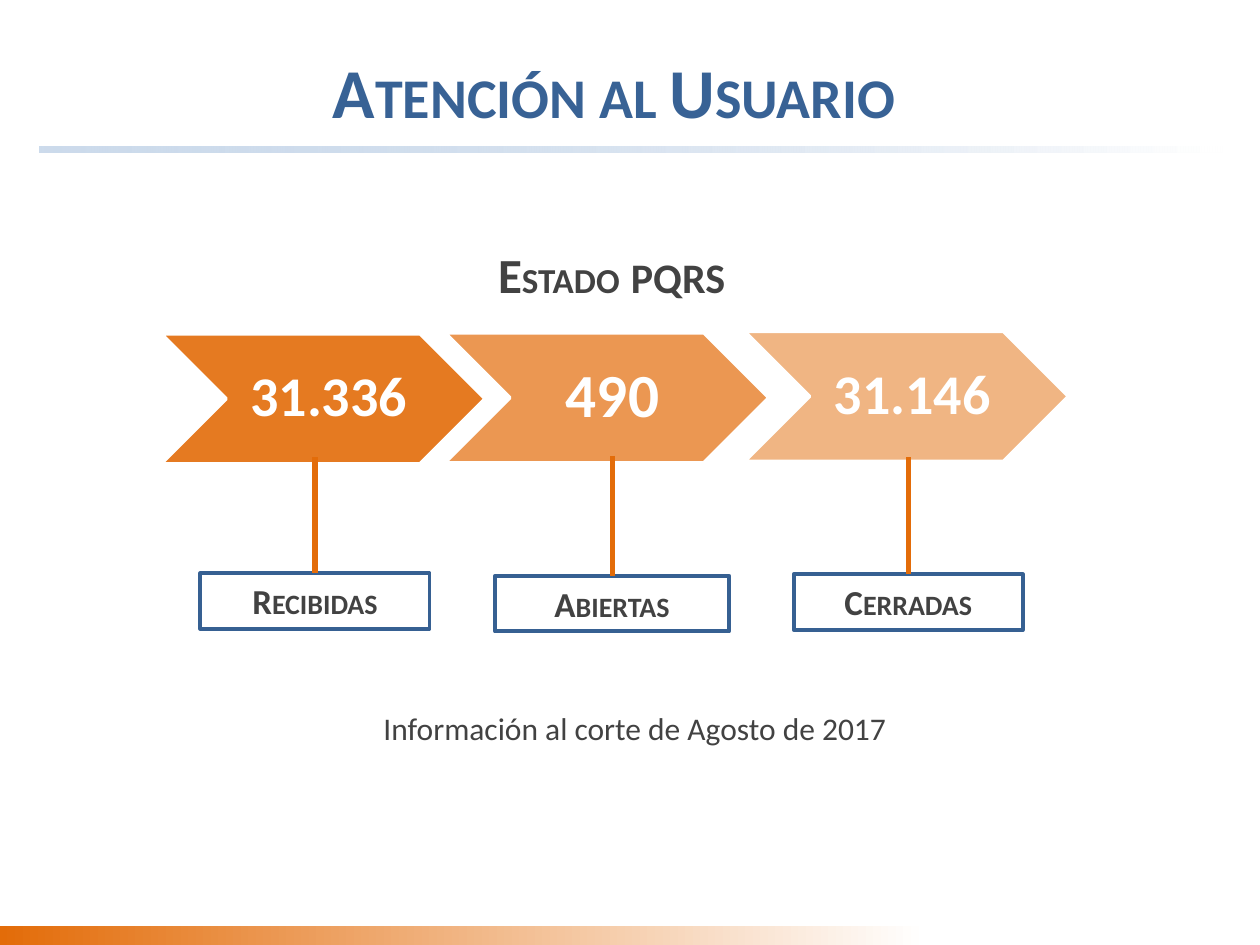
from dataclasses import dataclass

from lxml.etree import SubElement
from pptx import Presentation
from pptx.dml.color import RGBColor
from pptx.enum.shapes import MSO_CONNECTOR, MSO_SHAPE
from pptx.enum.text import MSO_ANCHOR, MSO_AUTO_SIZE, PP_ALIGN
from pptx.oxml.ns import qn
from pptx.util import Cm, Pt


@dataclass(frozen=True)
class Theme:
    font: str = "Calibri"
    orange: str = "E36C09"
    pale_blue: str = "9AB7D9"
    white: str = "FFFFFF"
    blue: str = "366092"
    title: str = "386295"
    text: str = "424242"
    title_sizes: tuple = (40, 32)
    heading_sizes: tuple = (28, 20, 24)
    label_sizes: tuple = (20, 16)
    caption_size: int = 18


THEME = Theme()

# value, size, opacity, chevron (left, top), label (left, top, width), stem top
STATUSES = [
    ("31.336", 32, 90, (0, 0.05), "RECIBIDAS", (0.79, 4.88, 4.62), 2.54),
    ("490", 35, 70, (5.72, 0.03), "ABIERTAS", (6.73, 4.93, 4.72), 2.51),
    ("31.146", 32, 50, (11.76, 0), "CERRADAS", (12.75, 4.9, 4.62), 2.54),
]


def rgb(value):
    return RGBColor.from_string(value)


def set_alpha(color_element, percent):
    SubElement(color_element, qn("a:alpha")).set("val", str(percent * 1000))


def write(shape, parts, color, bold=True, anchor=MSO_ANCHOR.TOP, insets=None):
    """Fill a shape with one centred line of (text, size) parts."""
    tf = shape.text_frame
    tf.word_wrap = True
    tf.vertical_anchor = anchor
    if insets:
        (tf.margin_left, tf.margin_top,
         tf.margin_right, tf.margin_bottom) = [Cm(v) for v in insets]
    p = tf.paragraphs[0]
    p.alignment = PP_ALIGN.CENTER
    for text, size in parts:
        r = p.add_run()
        r.text = text
        r.font.name = THEME.font
        r.font.size = Pt(size)
        r.font.bold = bold
        r.font.color.rgb = rgb(color)
    return tf


def add_shape(s, kind, left, top, width, height):
    sp = s.shapes.add_shape(kind, Cm(left), Cm(top), Cm(width), Cm(height))
    sp.shadow.inherit = False
    return sp


def add_fading_bar(s, box, color, opacity=100):
    """Bar that fades from a colour to white, left to right."""
    sp = add_shape(s, MSO_SHAPE.RECTANGLE, *box)
    sp.line.fill.background()
    sp.fill.gradient()
    sp.fill.gradient_angle = 0
    for stop, position, value in zip(sp.fill.gradient_stops, (0, 1), (color, THEME.white)):
        stop.position = position
        stop.color.rgb = rgb(value)
    if opacity < 100:
        set_alpha(sp.fill._xPr.find(".//" + qn("a:srgbClr")), opacity)


def add_title(s, left, top, width, height):
    title = s.shapes.title
    title.left, title.top, title.width, title.height = map(Cm, (left, top, width, height))
    big, small = THEME.title_sizes
    parts = [("A", big), ("TENCIÓN AL ", small), ("U", big), ("SUARIO", small)]
    tf = write(title, parts, THEME.title, anchor=MSO_ANCHOR.BOTTOM, insets=(0, 0, 0, 0))
    tf.auto_size = MSO_AUTO_SIZE.NONE


def add_heading(s, left, top, width, height):
    sp = s.shapes.add_textbox(Cm(left), Cm(top), Cm(width), Cm(height))
    big, small, medium = THEME.heading_sizes
    parts = [("E", big), ("STADO", small), (" ", big), ("PQRS", medium)]
    write(sp, parts, THEME.text, anchor=MSO_ANCHOR.BOTTOM, insets=(0, 0, 0, 0))


def add_chevron(s, left, top, value, size, opacity):
    sp = add_shape(s, MSO_SHAPE.CHEVRON, left, top, 6.53, 2.62)
    sp.fill.solid()
    sp.fill.fore_color.rgb = rgb(THEME.orange)
    set_alpha(sp.fill._xPr.find(".//" + qn("a:srgbClr")), opacity)
    sp.line.color.rgb = rgb(THEME.white)
    sp.line.width = Pt(2)
    tf = write(sp, [(value, size)], THEME.white, anchor=MSO_ANCHOR.MIDDLE,
               insets=(0.36, 0.13, 0.13, 0.13))
    tf.paragraphs[0].line_spacing = 0.9


def add_label(s, left, top, width, name):
    sp = add_shape(s, MSO_SHAPE.RECTANGLE, left, top, width, 1.12)
    sp.fill.background()
    sp.line.color.rgb = rgb(THEME.blue)
    sp.line.width = Pt(2.25)
    big, small = THEME.label_sizes
    tf = write(sp, [(name[0], big), (name[1:], small)], THEME.text)
    tf.auto_size = MSO_AUTO_SIZE.SHAPE_TO_FIT_TEXT
    return sp


def add_stem(s, top, label):
    """Vertical line from a chevron down to its label."""
    x = label.left + label.width // 2
    line = s.shapes.add_connector(MSO_CONNECTOR.STRAIGHT, x, Cm(top), x, label.top)
    line.end_connect(label, 0)
    line.line.color.rgb = rgb(THEME.orange)
    line.line.width = Pt(3)
    SubElement(line._element.spPr, qn("a:effectLst"))


def add_status_flow(s, left, top):
    for value, size, opacity, (cx, cy), name, (lx, ly, width), stem in STATUSES:
        add_chevron(s, left + cx, top + cy, value, size, opacity)
        label = add_label(s, left + lx, top + ly, width, name)
        add_stem(s, top + stem, label)


def add_caption(s, left, top, width, height):
    sp = s.shapes.add_textbox(Cm(left), Cm(top), Cm(width), Cm(height))
    parts = [("Información al corte de Agosto de 2017", THEME.caption_size)]
    tf = write(sp, parts, THEME.text, bold=False)
    tf.auto_size = MSO_AUTO_SIZE.SHAPE_TO_FIT_TEXT


def main():
    prs = Presentation()
    prs.slide_width, prs.slide_height = Cm(25.4), Cm(19.05)
    s = prs.slides.add_slide(prs.slide_layouts[5])

    # Bars under the title and at the foot
    add_fading_bar(s, (0.79, 2.95, 23.85, 0.13), THEME.pale_blue, 50)
    add_fading_bar(s, (0, 18.67, 18.67, 0.38), THEME.orange)

    # Title, heading, status flow and date
    add_title(s, -0.51, 0.69, 25.78, 1.98)
    add_heading(s, -0.56, 4.14, 25.78, 1.98)
    add_status_flow(s, 3.25, 6.68)
    add_caption(s, 0, 14.17, 25.6, 1.02)

    prs.save("out.pptx")


if __name__ == "__main__":
    main()
